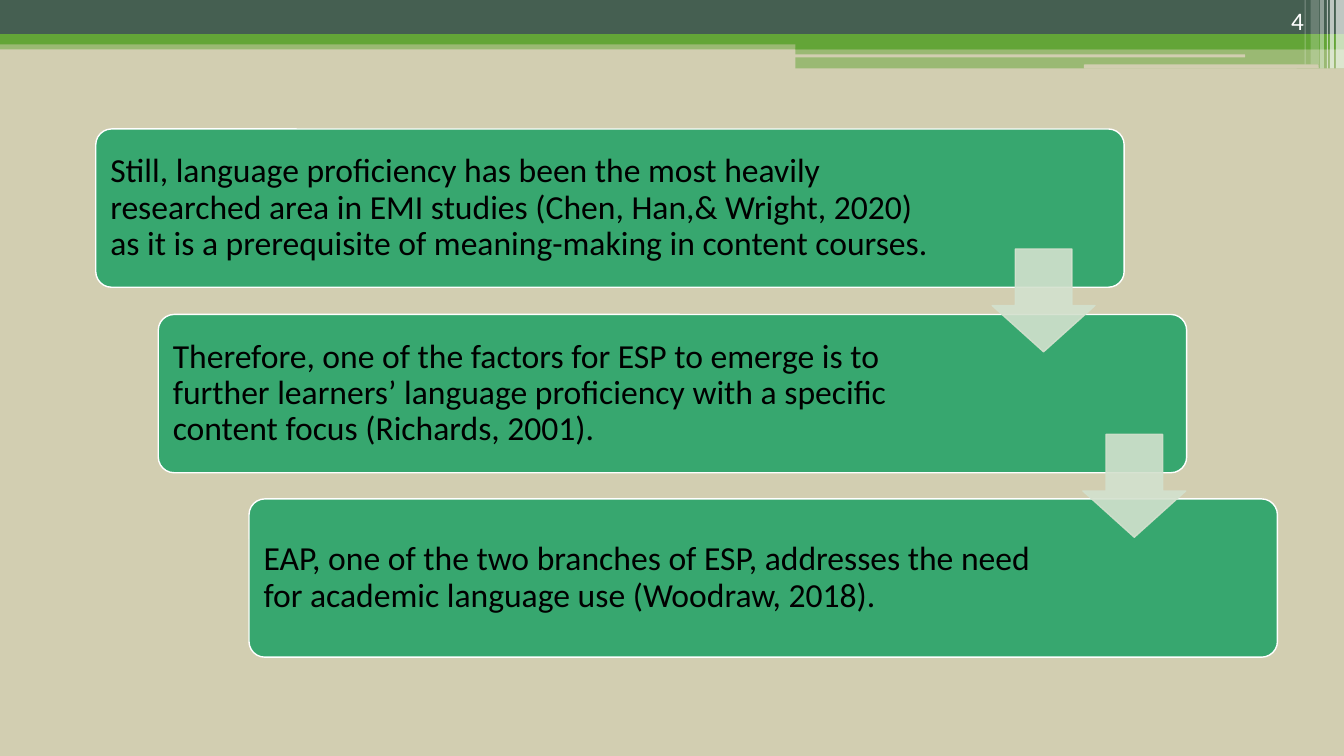
from pptx import Presentation
from pptx import util as u
from pptx.dml.color import RGBColor
from pptx.enum import shapes, text
from pptx.oxml.ns import qn
from lxml import etree

SAND = RGBColor(0xD2, 0xCE, 0xB1)
SLATE = RGBColor(0x45, 0x5F, 0x51)
GREEN = RGBColor(0x63, 0xA5, 0x37)
JADE = RGBColor(0x37, 0xA7, 0x6F)
MIST = RGBColor(0xD3, 0xE1, 0xCE)
WHITE = RGBColor(0xFF, 0xFF, 0xFF)
BLACK = RGBColor(0, 0, 0)

RECT = shapes.MSO_SHAPE.RECTANGLE
ROUND = shapes.MSO_SHAPE.ROUNDED_RECTANGLE
ARROW = shapes.MSO_SHAPE.DOWN_ARROW

BANDS = [
    (RECT, 0, 0.4, 13.33, 0.09, GREEN, 50),
    (RECT, 0, 0, 13.33, 0.34, SLATE, 100),
    (RECT, 0, 0.34, 13.33, 0.1, GREEN, 100),
    (RECT, 7.89, 0.39, 5.44, 0.1, GREEN, 100),
    (RECT, 7.89, 0.48, 5.44, 0.2, GREEN, 50),
    (ROUND, 7.88, 0.54, 4.47, 0.03, SAND, 100),
    (ROUND, 10.75, 0.64, 2.33, 0.04, SAND, 100),
]

STRIPES = [
    (13.25, 0.08, 0.68, 65),
    (13.19, 0.04, 0.68, 65),
    (13.16, 0.01, 0.68, 60),
    (13.09, 0.04, 0.68, 40),
    (13, 0.08, 0.64, 20),
    (12.94, 0.01, 0.64, 30),
]

STEPS = [
    (0.95, 1.28, 1.7, "Still, language proficiency has been the most heavily researched area "
     "in EMI studies (Chen, Han,& Wright, 2020) as it is a prerequisite of "
     "meaning-making in content courses."),
    (1.57, 3.12, 2.02, "Therefore, one of the factors for ESP to emerge is to further learners’ "
     "language proficiency with a specific content focus (Richards, 2001)."),
    (2.47, 4.95, 2.02, "EAP, one of the two branches of ESP, addresses the need for academic "
     "language use (Woodraw, 2018)."),
]


class Deck:
    font = "Calibri"

    def __init__(self):
        self.prs = Presentation()
        self.prs.slide_width = u.Inches(13.33)
        self.prs.slide_height = u.Inches(7.5)
        self.s = self.prs.slides.add_slide(self.prs.slide_layouts[6])
        self.s.background.fill.solid()
        self.s.background.fill.fore_color.rgb = SAND

    def shape(self, kind, x, y, w, h, color, opacity=100, line=None):
        sp = self.s.shapes.add_shape(kind, *map(u.Inches, (x, y, w, h)))
        sp.shadow.inherit = False
        sp.fill.solid()
        sp.fill.fore_color.rgb = color
        if line is None:
            sp.line.fill.background()
        else:
            sp.line.color.rgb = line
            sp.line.width = u.Pt(1)
        if opacity < 100:
            for clr in sp._element.spPr.iter(qn("a:srgbClr")):
                etree.SubElement(clr, qn("a:alpha"), val=str(opacity * 1000))
        return sp

    def label(self, sp, words, size, color, align, anchor):
        tf = sp.text_frame
        tf.word_wrap = True
        tf.vertical_anchor = anchor
        tf.text = words
        p = tf.paragraphs[0]
        p.alignment = align
        r = p.runs[0]
        r.font.name = self.font
        r.font.size = u.Pt(size)
        r.font.color.rgb = color
        return tf

    def page_number(self, number):
        sp = self.s.shapes.add_textbox(*map(u.Inches, (11.92, 0, 1.11, 0.4)))
        self.label(sp, number, 18, WHITE, text.PP_ALIGN.RIGHT, text.MSO_ANCHOR.BOTTOM)

    def step(self, x, y, right_inset, words):
        sp = self.shape(ROUND, x, y, 10.2, 1.57, JADE, line=WHITE)
        sp.adjustments[0] = 0.1
        tf = self.label(sp, words, 24, BLACK, text.PP_ALIGN.LEFT, text.MSO_ANCHOR.MIDDLE)
        tf.margin_left = tf.margin_top = tf.margin_bottom = u.Inches(0.1)
        tf.margin_right = u.Inches(right_inset)
        tf.paragraphs[0].line_spacing = 0.9

    def arrow(self, x, y):
        sp = self.shape(ARROW, x, y, 1.02, 1.02, MIST, 90, line=MIST)
        sp.adjustments[0] = 0.55
        sp.adjustments[1] = 0.45


def main():
    deck = Deck()
    for band in BANDS:
        deck.shape(*band)
    for x, w, h, opacity in STRIPES:
        deck.shape(RECT, x, 0, w, h, WHITE, opacity)
    deck.page_number("4")
    for step in STEPS:
        deck.step(*step)
    for upper, lower in zip(STEPS, STEPS[1:]):
        deck.arrow(lower[0] + 8.27, upper[1] + 1.19)
    deck.prs.save("out.pptx")


if __name__ == "__main__":
    main()
